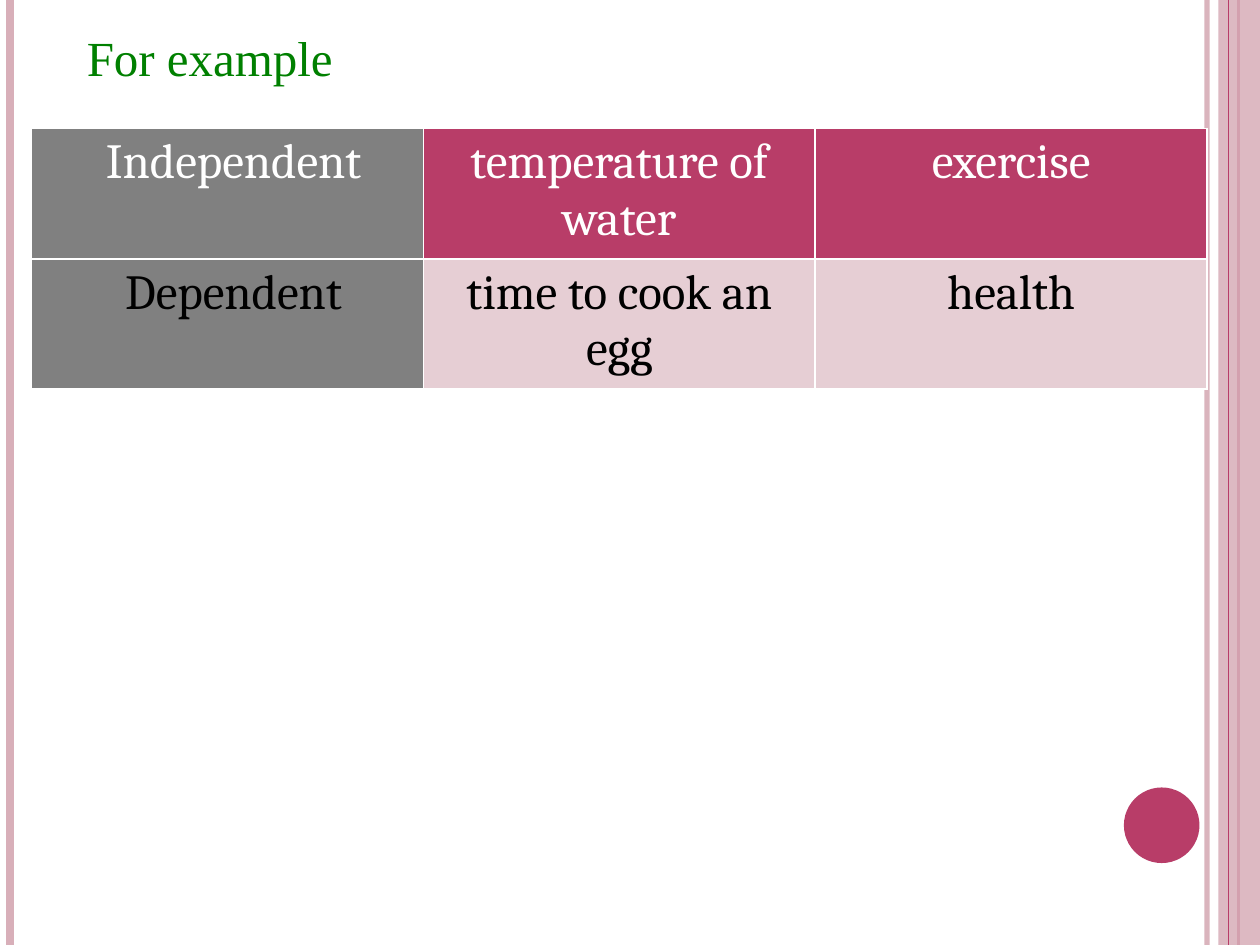
import pptx
import pptx.dml.color
import pptx.enum.shapes
import pptx.enum.text
import pptx.oxml
import pptx.oxml.ns
import pptx.util
from lxml import etree

RGBColor = pptx.dml.color.RGBColor
Inches = pptx.util.Inches
Pt = pptx.util.Pt
qn = pptx.oxml.ns.qn

WHITE = RGBColor(0xFF, 0xFF, 0xFF)
BLACK = RGBColor(0, 0, 0)
GREEN = RGBColor(0, 0x80, 0)
GRAY = RGBColor(0x80, 0x80, 0x80)
ROSE = RGBColor(0xD8, 0xAF, 0xB9)
MAGENTA = RGBColor(0xB8, 0x3D, 0x68)
PALE_ROSE = RGBColor(0xE6, 0xCE, 0xD4)


def set_alpha(fill_parent, percent):
    """Make the solid fill below fill_parent partly transparent."""
    color = fill_parent.find(".//" + qn("a:srgbClr"))
    etree.SubElement(color, qn("a:alpha"), val=str(percent * 1000))


def style_paragraph(paragraph, font_name, color):
    paragraph.alignment = pptx.enum.text.PP_ALIGN.CENTER
    paragraph.font.size = Pt(28)
    paragraph.font.name = font_name
    paragraph.font.color.rgb = color


presentation = pptx.Presentation()
presentation.slide_width = Inches(10)
presentation.slide_height = Inches(7.5)
height = presentation.slide_height
slide = presentation.slides.add_slide(presentation.slide_layouts[6])
shapes = slide.shapes

# Side band and vertical rules, from back to front
rules = [(9.58, ROSE, 3, 93), (0.08, ROSE, 4.5, 100),
         (9.83, MAGENTA, 1.5, 100), (9.75, MAGENTA, 0.75, 100)]
for x, color, width, opacity in rules:
    if x == 9.75:
        band = shapes.add_shape(pptx.enum.shapes.MSO_SHAPE.RECTANGLE,
                                Inches(9.67), 0, Inches(0.33), height)
        band.shadow.inherit = False
        band.fill.solid()
        band.fill.fore_color.rgb = ROSE
        band.line.fill.background()
        set_alpha(band._element.spPr, 87)
    rule = shapes.add_connector(pptx.enum.shapes.MSO_CONNECTOR.STRAIGHT,
                                Inches(x), 0, Inches(x), height)
    rule.line.color.rgb = color
    rule.line.width = Pt(width)
    if opacity < 100:
        set_alpha(rule._element.spPr, opacity)
    etree.SubElement(rule._element.spPr, qn("a:effectLst"))

dot = shapes.add_shape(pptx.enum.shapes.MSO_SHAPE.OVAL,
                       Inches(8.92), Inches(6.25), Inches(0.6), Inches(0.6))
dot.shadow.inherit = False
dot.fill.solid()
dot.fill.fore_color.rgb = MAGENTA
dot.line.fill.background()

title = shapes.add_textbox(Inches(0.25), Inches(0.17), Inches(2.83), Inches(0.58))
title.text_frame.word_wrap = True
title.text_frame.text = "For example"
style_paragraph(title.text_frame.paragraphs[0], "Times New Roman", GREEN)

# Table: a heading column, then one column per example
rows = [
    (["Independent ", "temperature of water", "exercise"], WHITE, MAGENTA),
    (["Dependent ", "time to cook an egg", "health"], BLACK, PALE_ROSE),
]
table = shapes.add_table(2, 3, Inches(0.25), Inches(1.02),
                         Inches(9.33), Inches(1.98)).table
for column in table.columns:
    column.width = Inches(3.11)
for row_index, (texts, text_color, row_fill) in enumerate(rows):
    for column_index, text in enumerate(texts):
        cell = table.cell(row_index, column_index)
        cell.text = text
        paragraph = cell.text_frame.paragraphs[0]
        style_paragraph(paragraph, "Cambria", text_color)
        if text != "exercise":
            paragraph._p.get_or_add_pPr().set("rtl", "1")
        properties = cell._tc.get_or_add_tcPr()
        for side in ("a:lnL", "a:lnR", "a:lnT", "a:lnB"):
            border = etree.SubElement(properties, qn(side), w=str(Pt(1)))
            fill = etree.SubElement(border, qn("a:solidFill"))
            etree.SubElement(fill, qn("a:srgbClr"), val=str(WHITE))
        cell.fill.solid()
        cell.fill.fore_color.rgb = GRAY if column_index == 0 else row_fill

presentation.save("out.pptx")
